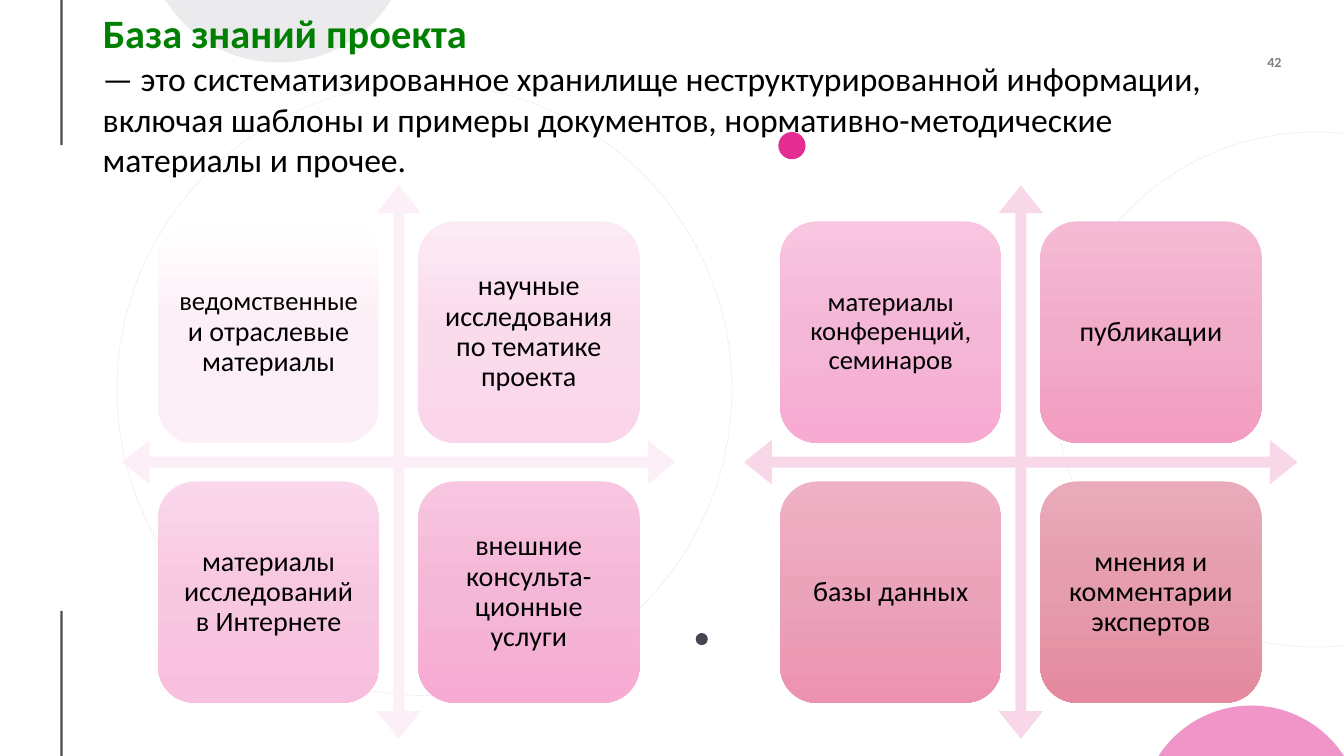
import math

import pptx
import pptx.dml.color
import pptx.enum.dml
import pptx.enum.shapes
import pptx.enum.text
import pptx.oxml
import pptx.oxml.ns
import pptx.util
from pptx.util import Inches

SHAPE = pptx.enum.shapes.MSO_SHAPE
ALIGN = pptx.enum.text.PP_ALIGN
ANCHOR = pptx.enum.text.MSO_ANCHOR
DASH = pptx.enum.dml.MSO_LINE

# Content
TITLE = "База знаний проекта"
DEFINITION = (
    "— это систематизированное хранилище неструктурированной информации, "
    "включая шаблоны и примеры документов, нормативно-методические материалы и прочее."
)
PAGE = "42"
COLORS = {
    "text": "000000", "title": "008000", "accent": "E32D91",
    "dark_dot": "454551", "grey": "D8D9DC",
}
# Each matrix: left edge, arrow colour, tiles row by row as (text runs, gradient)
MATRICES = [
    (1.21, "FDEFF7", [
        ([("ведомственные", 19), (" и отраслевые материалы", 20)], ("FFFEFE", "FDEFF7", "FDEDF6")),
        ([("научные исследования по тематике проекта", 20)], ("FCEAF4", "FADBEC", "FBD5EA")),
        ([("материалы исследований в Интернете", 20)], ("FAD7EA", "F8C8E1", "F9BFDE")),
        ([("внешние консульта-ционные услуги", 20)], ("F8C6E0", "F5B7D7", "F7ABD2")),
    ]),
    (7.38, "F8D8E8", [
        ([("материалы конференций, семинаров", 19)], ("F8C6E0", "F5B7D7", "F7ABD2")),
        ([("публикации", 20)], ("F4BAD3", "F1ACC9", "F29DC1")),
        ([("базы данных", 20)], ("EFB1C5", "EBA3BA", "EC92B0")),
        ([("мнения и комментарии экспертов", 20)], ("E9AAB9", "E59CAC", "E4899F")),
    ]),
]
# Ellipses: left, top, width, height
RINGS = [(10.47, 1.31, 5.14, 5.11), (1.16, 0.83, 6.1, 6.07)]
DOTS = [(6.9, 6.28, 0.12, "dark_dot"), (7.72, 1.31, 0.27, "accent")]
# Circle caps on a slide edge: centre x, edge y, half width, height (negative is up)
CAPS = [(12.41, 7.5, 0.92, -0.5, "accent"), (2.76, 0, 1.12, 0.62, "grey")]

# Matrix geometry
CROSS = 5.49
CROSS_TOP = 1.84
TILE = 0.4 * CROSS
MARGIN = 0.065 * CROSS
PITCH = 0.47 * CROSS


def rgb(value):
    return pptx.dml.color.RGBColor.from_string(value)


def set_opacity(part, percent):
    """Make the solid colour inside a fill or line element translucent."""
    color = next(part.iter(pptx.oxml.ns.qn("a:srgbClr")))
    color.append(pptx.oxml.parse_xml(
        f'<a:alpha {pptx.oxml.ns.nsdecls("a")} val="{percent * 1000}"/>'))


def set_line(sp, width, opacity, dash):
    sp.line.color.rgb = rgb(COLORS["text"])
    sp.line.width = pptx.util.Pt(width)
    sp.line.dash_style = dash
    set_opacity(sp.element.spPr.find(pptx.oxml.ns.qn("a:ln")), opacity)


def set_fill(sp, color):
    sp.shadow.inherit = False
    sp.fill.solid()
    sp.fill.fore_color.rgb = rgb(color)
    sp.line.fill.background()


def set_gradient(sp, stops):
    set_fill(sp, stops[0])
    solid = sp.element.spPr.find(pptx.oxml.ns.qn("a:solidFill"))
    gs = "".join(f'<a:gs pos="{i * 50000}"><a:srgbClr val="{c}"/></a:gs>'
                 for i, c in enumerate(stops))
    solid.getparent().replace(solid, pptx.oxml.parse_xml(
        f'<a:gradFill {pptx.oxml.ns.nsdecls("a")} rotWithShape="1"><a:gsLst>{gs}</a:gsLst>'
        '<a:lin ang="5400000" scaled="0"/></a:gradFill>'))


def add_shape(s, kind, left, top, width, height):
    return s.shapes.add_shape(kind, *map(Inches, (left, top, width, height)))


def add_text(s, left, top, width, height):
    sp = s.shapes.add_textbox(*map(Inches, (left, top, width, height)))
    sp.text_frame.word_wrap = True
    return sp


def set_margins(tf, margin):
    tf.margin_left = tf.margin_right = tf.margin_top = tf.margin_bottom = Inches(margin)


def format_text(p, size, color, bold=False, align=ALIGN.LEFT):
    p.alignment = align
    p.font.name = "Calibri"
    p.font.bold = bold
    p.font.color.rgb = rgb(color)
    if size:
        p.font.size = pptx.util.Pt(size)


def add_cap(s, x, edge, half, height, color):
    depth = abs(height)
    radius = (half ** 2 + depth ** 2) / (2 * depth)
    reach = math.asin(half / radius)
    points = []
    for i in range(61):
        a = reach * (i / 30 - 1)
        drop = radius * math.cos(a) - (radius - depth)
        points.append((Inches(x + radius * math.sin(a)),
                       Inches(edge + math.copysign(drop, height))))
    builder = s.shapes.build_freeform(*points[0])
    builder.add_line_segments(points[1:], close=True)
    sp = builder.convert_to_shape()
    set_fill(sp, COLORS[color])
    set_opacity(sp.element.spPr, 50)


def add_decor(s):
    for top, bottom in [(6.06, 7.5), (0, 1.44)]:
        line = s.shapes.add_connector(pptx.enum.shapes.MSO_CONNECTOR.STRAIGHT, Inches(0.61),
                                      Inches(top), Inches(0.61), Inches(bottom))
        set_line(line, 1.5, 70, DASH.SOLID)
        line.element.spPr.append(
            pptx.oxml.parse_xml(f'<a:effectLst {pptx.oxml.ns.nsdecls("a")}/>'))
    for box in RINGS:
        ring = add_shape(s, SHAPE.OVAL, *box)
        ring.shadow.inherit = False
        ring.fill.background()
        set_line(ring, 0.5, 10, DASH.ROUND_DOT)
    for left, top, size, color in DOTS:
        set_fill(add_shape(s, SHAPE.OVAL, left, top, size, size), COLORS[color])
    for cap in CAPS:
        add_cap(s, *cap)


def add_page_number(s):
    tf = add_text(s, 11.94, 0.48, 0.77, 0.27).text_frame
    tf.vertical_anchor = ANCHOR.MIDDLE
    set_margins(tf, 0)
    tf.text = PAGE
    p = tf.paragraphs[0]
    format_text(p, 10, COLORS["text"], True, ALIGN.RIGHT)
    set_opacity(p.font._element, 50)


def add_heading(s):
    title = s.shapes.title
    s.shapes.element.append(title.element)  # bring in front of the decor
    title.left, title.top, title.width, title.height = map(Inches, (0.92, 0.13, 11.21, 0.45))
    tf = title.text_frame
    tf.text = TITLE
    tf.auto_size = pptx.enum.text.MSO_AUTO_SIZE.NONE
    tf.vertical_anchor = ANCHOR.MIDDLE
    format_text(tf.paragraphs[0], 28.8, COLORS["title"], True)
    tf.paragraphs[0].line_spacing = 0.9
    tf = add_text(s, 0.92, 0.53, 11.49, 1.31).text_frame
    tf.text = DEFINITION
    format_text(tf.paragraphs[0], 24, COLORS["text"])


def add_matrix(s, left, arrow_color, tiles):
    arrows = add_shape(s, SHAPE.QUAD_ARROW, left, CROSS_TOP, CROSS, CROSS)
    for i, value in enumerate((0.02, 0.04, 0.05)):
        arrows.adjustments[i] = value
    set_fill(arrows, arrow_color)
    for i, (runs, stops) in enumerate(tiles):
        row, col = divmod(i, 2)
        sp = add_shape(s, SHAPE.ROUNDED_RECTANGLE, left + MARGIN + col * PITCH,
                       CROSS_TOP + MARGIN + row * PITCH, TILE, TILE)
        set_gradient(sp, stops)
        tf = sp.text_frame
        tf.word_wrap = True
        tf.vertical_anchor = ANCHOR.MIDDLE
        set_margins(tf, 0.08)
        p = tf.paragraphs[0]
        format_text(p, None, COLORS["text"], align=ALIGN.CENTER)
        p.line_spacing = 0.9
        for text, size in runs:
            r = p.add_run()
            r.text = text
            r.font.size = pptx.util.Pt(size)


def main():
    prs = pptx.Presentation()
    prs.slide_width, prs.slide_height = Inches(13.33), Inches(7.5)
    s = prs.slides.add_slide(prs.slide_layouts[5])
    add_decor(s)
    add_page_number(s)
    add_heading(s)
    for matrix in MATRICES:
        add_matrix(s, *matrix)
    prs.save("out.pptx")


if __name__ == "__main__":
    main()
